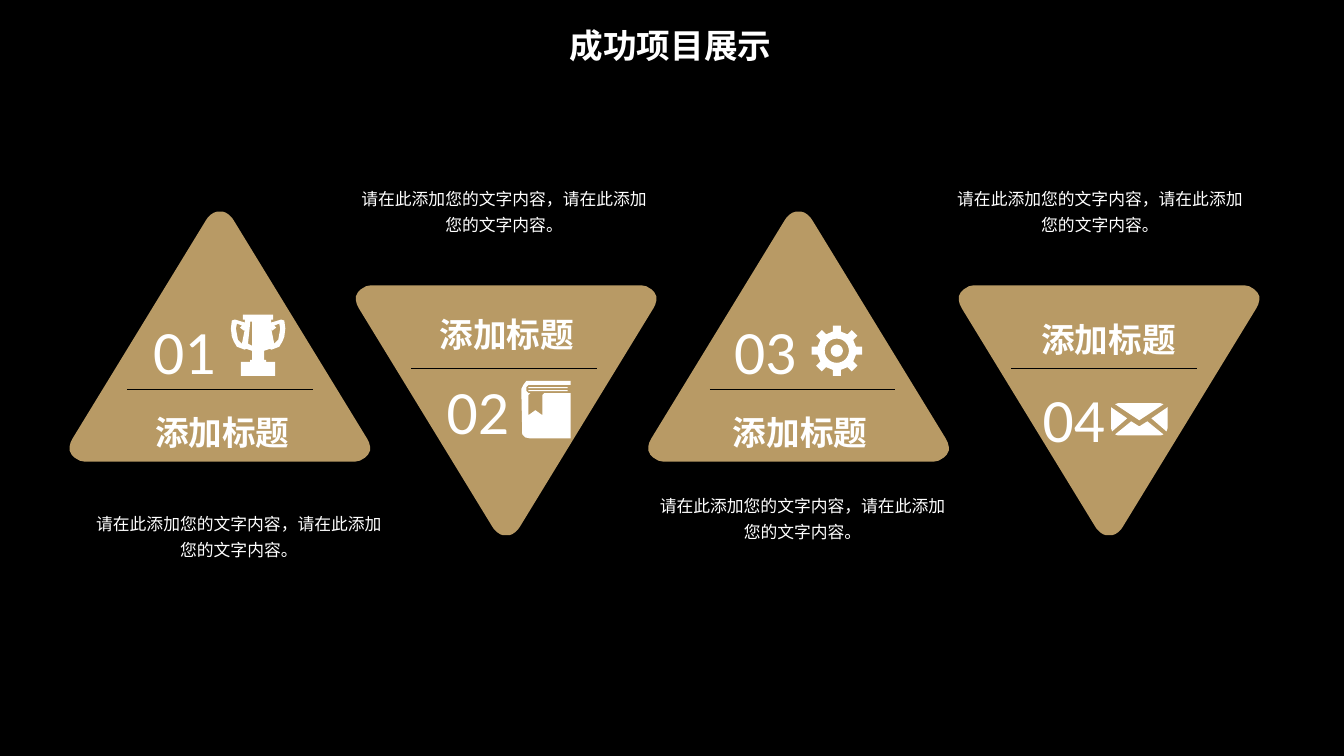
import math

from pptx import Presentation
from pptx.dml.color import RGBColor
from pptx.enum import lang, shapes, text
from pptx.oxml.ns import qn
from pptx.util import Inches, Pt

GOLD, WHITE, BLACK = "B89A65", "FFFFFF", "000000"
SANS, HEADING_FONT, NUMBER_FONT = "Noto Sans CJK SC", "Roboto Condensed", "Calibri"
HEADING = "添加标题"
CAPTION = "请在此添加您的文字内容，请在此添加您的文字内容。"
RULE_WIDTH = 1.84

# Right half of the rounded triangle, from the apex down to the base
TRIANGLE_HALF = [(0, 0), (0.03, 0), (0.06, 0.01), (0.09, 0.03), (0.12, 0.06), (0.14, 0.09),
                 (1.46, 2.25), (1.48, 2.29), (1.49, 2.33), (1.49, 2.37), (1.47, 2.41),
                 (1.44, 2.44), (1.39, 2.47), (1.34, 2.48), (1.28, 2.48)]

# Per project: number, triangle centre, points up, number box, rule start,
# heading box, heading line spacing, caption position
PROJECTS = [
    ("01", 2.18, True, (1.28, 3.06), (1.26, 3.86), (1.43, 3.84, 1.55, 0.63), 1.5, (0.81, 4.99)),
    ("02", 5.02, False, (4.19, 3.65), (4.08, 3.65), (4.25, 3.06, 1.55, 0.51), 1, (3.44, 1.76)),
    ("03", 7.92, True, (7.04, 3.06), (7.04, 3.86), (7.16, 3.84, 1.55, 0.71), 1.5, (6.4, 4.81)),
    ("04", 11, False, (10.1, 3.73), (10.03, 3.65), (10.22, 3.11, 1.55, 0.51), 1, (9.35, 1.76)),
]


def color(value):
    return RGBColor.from_string(value)


def mirrored(half):
    """Close a right-hand half outline with its reflection in the vertical axis."""
    return half + [(-x, y) for x, y in reversed(half)]


def flipped(outline):
    return [(-x, y) for x, y in outline]


def circle(radius, steps=32):
    turns = [math.tau * step / steps for step in range(steps)]
    return [(radius * math.cos(turn), radius * math.sin(turn)) for turn in turns]


def draw_outlines(page, outlines, left, top, fill, direction=1):
    """Draw closed outlines as one shape; direction -1 turns it upside down."""
    contours = [[(Inches(left + x), Inches(top + direction * y)) for x, y in outline]
                for outline in outlines]
    builder = page.shapes.build_freeform(*contours[0][0])
    builder.add_line_segments(contours[0][1:], close=True)
    for contour in contours[1:]:
        builder.move_to(*contour[0])
        builder.add_line_segments(contour[1:], close=True)
    shape = builder.convert_to_shape()
    shape.shadow.inherit = False
    shape.fill.solid()
    shape.fill.fore_color.rgb = color(fill)
    shape.line.fill.background()


def write(box, words, size, font, bold=False, wrap=True, spacing=1):
    frame = box.text_frame
    frame.word_wrap = wrap
    frame.auto_size = text.MSO_AUTO_SIZE.SHAPE_TO_FIT_TEXT
    frame.vertical_anchor = text.MSO_ANCHOR.TOP
    para = frame.paragraphs[0]
    para.alignment = text.PP_ALIGN.CENTER
    para.line_spacing = spacing
    span = para.add_run()
    span.text = words
    span.font.name = font
    span.font.size = Pt(size)
    span.font.bold = bold
    span.font.color.rgb = color(WHITE)
    span.font.language_id = lang.MSO_LANGUAGE_ID.SIMPLIFIED_CHINESE
    properties = span.font._element
    east_asian = properties.makeelement(qn("a:ea"), {"typeface": font})
    properties.find(qn("a:latin")).addnext(east_asian)


def add_text(page, place, words, size, font, **style):
    box = page.shapes.add_textbox(*(Inches(length) for length in place))
    write(box, words, size, font, **style)


def add_title(page, words):
    title = page.shapes.title
    title.left, title.top = Inches(5.35), Inches(0.2)
    title.width, title.height = Inches(2.6), Inches(0.5)
    write(title, words, 24, SANS, bold=True)


def add_rule(page, left, top):
    rule = page.shapes.add_connector(
        shapes.MSO_CONNECTOR.STRAIGHT,
        Inches(left), Inches(top), Inches(left + RULE_WIDTH), Inches(top))
    rule.line.color.rgb = color(BLACK)
    rule.line.width = Pt(0.5)
    properties = rule._element.spPr
    properties.append(properties.makeelement(qn("a:effectLst"), {}))


def add_project(page, number, center, points_up, number_at, rule_at,
                heading_place, heading_spacing, caption_at):
    apex, direction = (2.1, 1) if points_up else (5.31, -1)
    draw_outlines(page, [mirrored(TRIANGLE_HALF)], center, apex, GOLD, direction)
    add_text(page, (*number_at, 1.1, 0.84), number, 44, NUMBER_FONT)
    add_rule(page, *rule_at)
    add_text(page, heading_place, HEADING, 24, HEADING_FONT,
             bold=True, wrap=False, spacing=heading_spacing)
    add_text(page, (*caption_at, 3.12, 0.62), CAPTION, 12, SANS, spacing=1.3)


def add_trophy(page):
    cup = [(0.15, 0), (0.15, 0.05), (0.13, 0.05), (0.13, 0.08), (0.23, 0.05),
           (0.26, 0.06), (0.27, 0.14), (0.26, 0.22), (0.24, 0.27), (0.21, 0.32),
           (0.13, 0.35), (0.12, 0.34), (0.06, 0.36), (0.06, 0.45), (0.08, 0.45),
           (0.08, 0.47), (0.17, 0.47), (0.17, 0.61)]
    handle = [(0.13, 0.14), (0.14, 0.16), (0.18, 0.13), (0.16, 0.11), (0.21, 0.09),
              (0.22, 0.14), (0.2, 0.25), (0.16, 0.29)]
    glint = [(-0.06, 0.07), (-0.06, 0.31), (-0.1, 0.29), (-0.08, 0.1), (-0.08, 0.07)]
    draw_outlines(page, [mirrored(cup), handle, flipped(handle), glint], 2.56, 3.12, WHITE)


def add_book(page):
    cover = [(0.49, 0.04), (0.07, 0.04), (0.05, 0.06), (0.05, 0.1), (0.07, 0.12),
             (0.09, 0.12), (0.07, 0.14), (0.07, 0.34), (0.14, 0.29), (0.21, 0.34),
             (0.21, 0.14), (0.23, 0.12), (0.49, 0.12), (0.49, 0.57), (0.09, 0.57),
             (0.04, 0.56), (0.01, 0.53), (0, 0.08), (0.02, 0.04), (0.05, 0), (0.49, 0)]
    sheets = [[(0.07, y), (0.46, y), (0.46, y + 0.01), (0.07, y + 0.01)]
              for y in (0.06, 0.09)]
    draw_outlines(page, [cover, *sheets], 5.17, 3.78, WHITE)


def add_gear(page):
    tooth = [(-0.04, -0.19), (-0.04, -0.25), (0.04, -0.25), (0.04, -0.19)]
    rim = []
    for step in range(8):
        sine, cosine = math.sin(step * math.pi / 4), math.cos(step * math.pi / 4)
        rim += [(x * cosine - y * sine, x * sine + y * cosine) for x, y in tooth]
    draw_outlines(page, [rim, circle(0.12), circle(0.06)], 8.3, 3.48, WHITE)


def add_envelope(page):
    flap = [(0, 0.17), (0.24, 0.01), (0.21, 0)]
    side = [(0.28, 0.04), (0.12, 0.15), (0.27, 0.28), (0.28, 0.25)]
    front = [(0, 0.23), (0.08, 0.18), (0.24, 0.31), (0.21, 0.32)]
    draw_outlines(page, [mirrored(flap), side, flipped(side), mirrored(front)], 11.3, 4, WHITE)


def main():
    deck = Presentation()
    deck.slide_width, deck.slide_height = Inches(13.33), Inches(7.5)
    page = deck.slides.add_slide(deck.slide_layouts.get_by_name("Title Only"))
    page.background.fill.solid()
    page.background.fill.fore_color.rgb = color(BLACK)
    add_title(page, "成功项目展示")
    for project in PROJECTS:
        add_project(page, *project)
    add_trophy(page)
    add_book(page)
    add_gear(page)
    add_envelope(page)
    deck.save("out.pptx")


if __name__ == "__main__":
    main()
